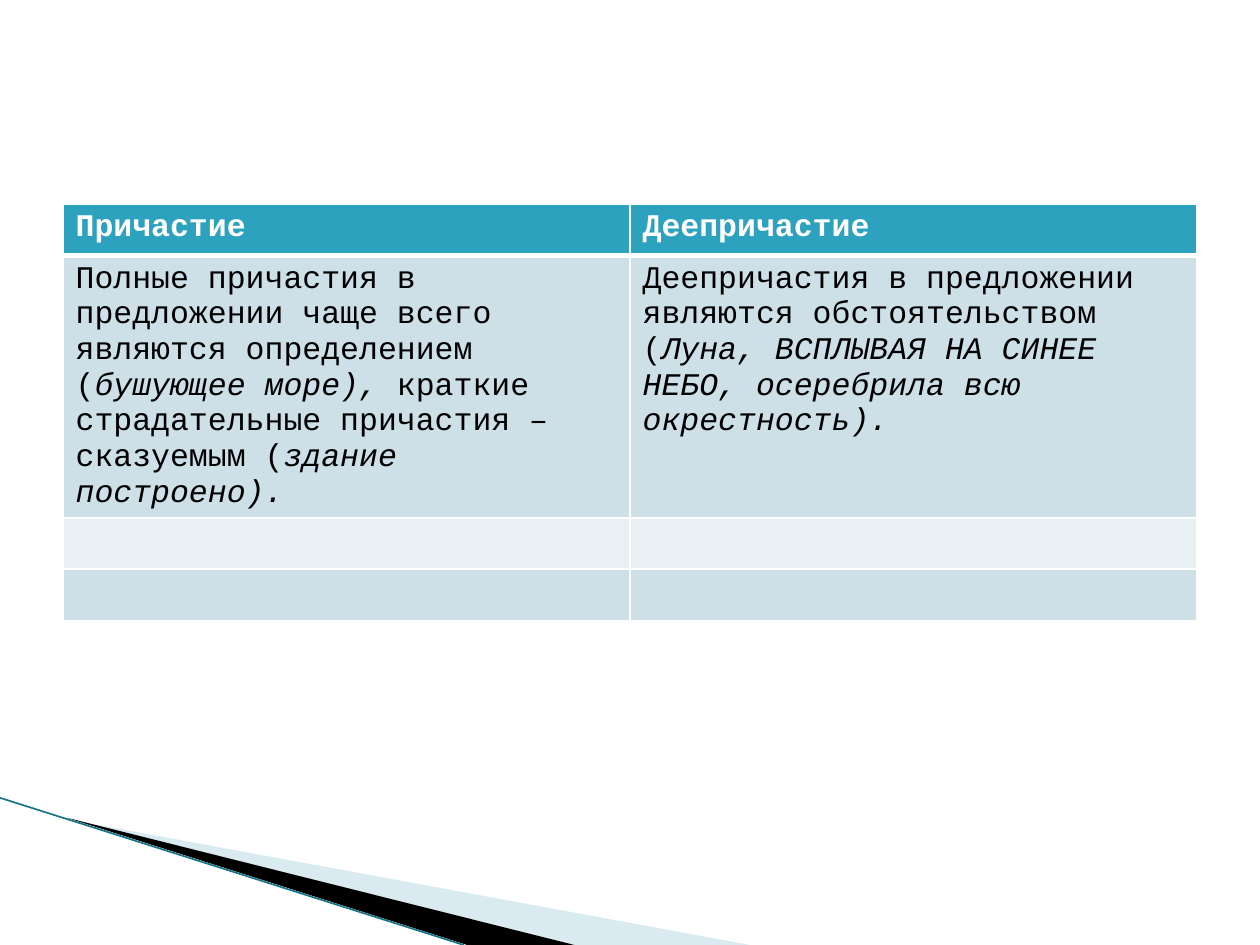
from dataclasses import dataclass
from typing import NamedTuple, Optional

from lxml.etree import SubElement as Sub
from pptx import Presentation
from pptx.dml.color import RGBColor as RGB
from pptx.enum.shapes import MSO_CONNECTOR as Link
from pptx.oxml.ns import qn
from pptx.util import Pt


@dataclass(frozen=True)
class Theme:
    font: str = "Courier New"
    size: float = 18
    white: str = "FFFFFF"
    black: str = "000000"
    header: str = "2DA2BF"
    band_dark: str = "CDE0E8"
    band_light: str = "E8F0F4"
    wedge: str = "A0CBDC"
    edge: str = "167488"


class Phrase(NamedTuple):
    text: str
    italic: bool = False


class Row(NamedTuple):
    fill: str
    color: str
    bold: bool
    cells: tuple


class Wedge(NamedTuple):
    points: tuple
    fill: str
    opacity: Optional[int] = None


THEME = Theme()
SLIDE_W, SLIDE_H = 720, 540
TABLE_LEFT, TABLE_TOP, TABLE_W = 36, 116.8, 648
ROW_H = 29.2

WEDGES = (
    Wedge(((39.6, 468.4), (428.5, SLIDE_H), (328.3, SLIDE_H)), THEME.wedge, 40),
    Wedge(((38.2, 467.3), (328.3, SLIDE_H), (267, SLIDE_H)), THEME.black),
)
EDGE = ((0, 455.9), (265, SLIDE_H))

EMPTY = ((), ())
ROWS = (
    Row(THEME.header, THEME.white, True,
        ((Phrase("Причастие"),), (Phrase("Деепричастие"),))),
    Row(THEME.band_dark, THEME.black, False, (
        (Phrase("Полные причастия в предложении чаще всего являются определением ("),
         Phrase("бушующее море), ", True),
         Phrase("краткие страдательные причастия – сказуемым ("),
         Phrase("здание построено).", True)),
        (Phrase("Деепричастия в предложении являются обстоятельством ("),
         Phrase("Луна, ВСПЛЫВАЯ НА СИНЕЕ НЕБО, осеребрила всю окрестность).", True)),
    )),
    Row(THEME.band_light, THEME.black, False, EMPTY),
    Row(THEME.band_dark, THEME.black, False, EMPTY),
)


def draw_wedge(slide, wedge: Wedge) -> None:
    start, *rest = [(Pt(x), Pt(y)) for x, y in wedge.points]
    builder = slide.shapes.build_freeform(*start)
    builder.add_line_segments(rest, close=True)
    shape = builder.convert_to_shape()
    shape.shadow.inherit = False
    shape.line.fill.background()
    shape.fill.solid()
    shape.fill.fore_color.rgb = RGB.from_string(wedge.fill)
    if wedge.opacity is not None:
        color = next(shape._element.spPr.iter(qn("a:srgbClr")))
        Sub(color, qn("a:alpha"), val=str(wedge.opacity * 1000))


def draw_edge(slide) -> None:
    ends = [Pt(value) for point in EDGE for value in point]
    edge = slide.shapes.add_connector(Link.STRAIGHT, *ends)
    edge.line.color.rgb = RGB.from_string(THEME.edge)
    edge.line.width = Pt(0.95)
    Sub(edge._element.spPr, qn("a:effectLst"))


def set_borders(cell, widths: dict) -> None:
    properties = cell._tc.get_or_add_tcPr()
    for position, (side, width) in enumerate(widths.items()):
        border = properties.makeelement(qn(f"a:{side}"), {"w": str(Pt(width))})
        fill = Sub(border, qn("a:solidFill"))
        Sub(fill, qn("a:srgbClr"), val=THEME.white)
        properties.insert(position, border)


def write_cell(cell, row: Row, phrases: tuple) -> None:
    paragraph = cell.text_frame.paragraphs[0]
    paragraph.font.size = Pt(THEME.size)
    for phrase in phrases:
        run = paragraph.add_run()
        run.text = phrase.text
        formats = {"name": THEME.font, "size": Pt(THEME.size),
                   "bold": row.bold, "italic": phrase.italic}
        for name, value in formats.items():
            setattr(run.font, name, value)
        run.font.color.rgb = RGB.from_string(row.color)


def draw_table(slide) -> None:
    columns = len(ROWS[0].cells)
    table = slide.shapes.add_table(
        len(ROWS), columns, Pt(TABLE_LEFT), Pt(TABLE_TOP),
        Pt(TABLE_W), Pt(ROW_H * len(ROWS))).table
    for r, row in enumerate(ROWS):
        table.rows[r].height = Pt(ROW_H)
        for c, phrases in enumerate(row.cells):
            cell = table.cell(r, c)
            cell.fill.solid()
            cell.fill.fore_color.rgb = RGB.from_string(row.fill)
            # The rule under the header is thicker than the others
            set_borders(cell, {"lnL": 1, "lnR": 1,
                               "lnT": 3 if r == 1 else 1,
                               "lnB": 3 if r == 0 else 1})
            write_cell(cell, row, phrases)


def main() -> None:
    deck = Presentation()
    deck.slide_width, deck.slide_height = Pt(SLIDE_W), Pt(SLIDE_H)
    slide = deck.slides.add_slide(deck.slide_layouts[6])

    # Corner decoration
    for wedge in WEDGES:
        draw_wedge(slide, wedge)
    draw_edge(slide)

    # Comparison of the two verb forms
    draw_table(slide)
    deck.save("out.pptx")


if __name__ == "__main__":
    main()
